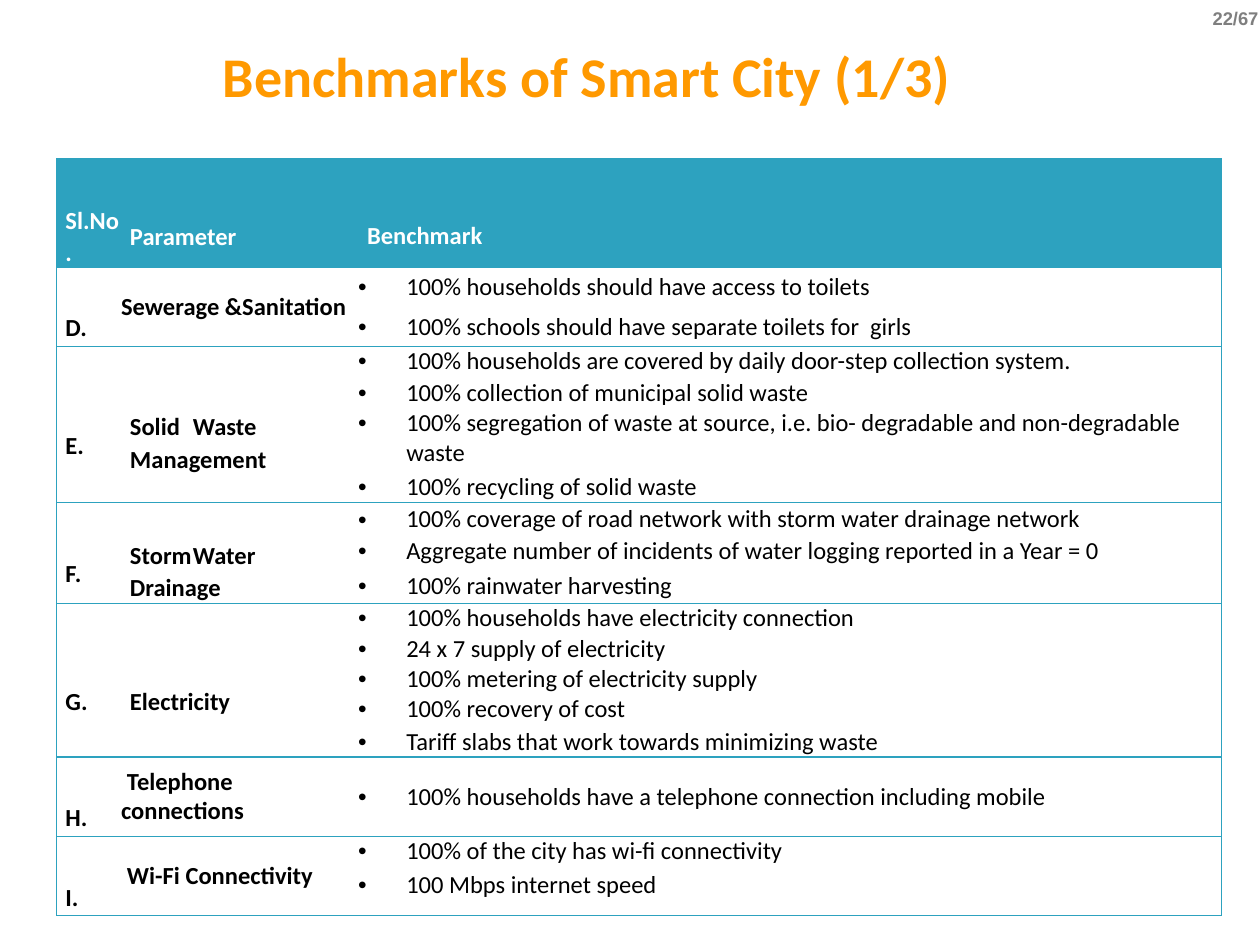
from lxml.etree import SubElement
from pptx import Presentation
from pptx.dml.color import RGBColor
from pptx.enum.text import MSO_ANCHOR, PP_ALIGN
from pptx.oxml.ns import qn
from pptx.util import Cm, Pt

TEAL = RGBColor(0x2D, 0xA2, 0xBF)
ORANGE = RGBColor(0xFF, 0x99, 0x00)
GREY = RGBColor(0x7F, 0x7F, 0x7F)
BLACK = RGBColor(0, 0, 0)
WHITE = RGBColor(255, 255, 255)

WIDTHS = (1.3, 4.78, 17.4)
PAD = 0.87   # drop of a label below the cell's middle line
INSET = 0.18

HEAD = (("Sl.No.", 0.91), ("Parameter", 0.91), ("Benchmark", PAD))

# height, letter, label lines, label (left, first indent, top, tab, gap), bullets with space after
ROWS = (
    (1.59, "D.", ("Sewerage &Sanitation",), (0, 0, 0, 0, 0), (
        ("100% households should have access to toilets", 5.8),
        ("100% schools should have separate toilets for  girls", 5.8))),
    (3.15, "E.", ("Solid\tWaste", "Management"), (INSET, 0, 0.78, 2.54, 1.7), (
        ("100% households are covered by daily door-step collection system.", 1.2),
        ("100% collection of municipal solid waste", 0),
        ("100% segregation of waste at source, i.e. bio- degradable and "
         "non-degradable waste", 2.6),
        ("100% recycling of solid waste", 0))),
    (2.03, "F.", ("Storm\tWater", "Drainage"), (INSET, 0, 0.78, 2.66, 1.4), (
        ("100% coverage of road network with storm water drainage network", 1.1),
        ("Aggregate number of incidents of water logging reported in a Year = 0", 2.9),
        ("100% rainwater harvesting", 0))),
    (3.1, "G.", ("Electricity",), (INSET, 0, PAD, 0, 0), (
        ("100% households have electricity connection", 0.5),
        ("24 x 7 supply of electricity", 0.2),
        ("100% metering of electricity supply", 0),
        ("100% recovery of cost", 2.1),
        ("Tariff slabs that work towards minimizing waste", 0))),
    (1.6, "H.", ("Telephone connections",), (0, 0.12, 0, 0, 0), (
        ("100% households have a telephone connection including mobile", 0),)),
    (1.6, "I.", ("Wi-Fi Connectivity",), (0, 0.12, 0, 0, 0), (
        ("100% of the city has wi-fi connectivity", 2.1),
        ("100 Mbps internet speed", 0))),
)


def style(para, size, color, bold=True, face="Calibri"):
    for run in para.runs:
        font = run.font
        font.name, font.size, font.bold = face, Pt(size), bold
        font.color.rgb = color


def indent(para, left, first=0):
    props = para._p.get_or_add_pPr()
    props.set("marL", str(Cm(left)))
    props.set("indent", str(Cm(first)))
    return props


def bullet(para):
    props = indent(para, 0.97, -0.97)
    tint = SubElement(props, qn("a:buClr"))
    SubElement(tint, qn("a:srgbClr"), val=str(BLACK))
    SubElement(props, qn("a:buFont"), typeface="Arial")
    SubElement(props, qn("a:buChar"), char="•")


def tab(para, at):
    stops = SubElement(para._p.get_or_add_pPr(), qn("a:tabLst"))
    SubElement(stops, qn("a:tab"), pos=str(Cm(at)), algn="l")


def frame(cell, col, fill=None):
    """Rule the cell above and below, and on the table's outer sides."""
    props = cell._tc.get_or_add_tcPr()
    sides = {"L": col == 0, "R": col == len(WIDTHS) - 1, "T": True, "B": True}
    for side, drawn in sides.items():
        line = SubElement(props, qn("a:ln" + side), w=str(Pt(0.75)))
        if drawn:
            paint = SubElement(line, qn("a:solidFill"))
            SubElement(paint, qn("a:srgbClr"), val=str(TEAL))
        else:
            SubElement(line, qn("a:noFill"))
    if fill is None:
        cell.fill.background()
    else:
        cell.fill.solid()
        cell.fill.fore_color.rgb = fill


def write(cell, lines, top=0, right=0.08):
    cell.margin_left = cell.margin_bottom = 0
    cell.margin_top, cell.margin_right = Cm(top), Cm(right)
    cell.vertical_anchor = MSO_ANCHOR.MIDDLE
    cell.text_frame.text = "\n".join(lines)
    return cell.text_frame.paragraphs


def label(cell, text, top, color):
    para = write(cell, [text], top, 0)[0]
    indent(para, INSET)
    para.line_spacing = 1.07 if color == WHITE else 1.0
    style(para, 14, color)


def name(cell, lines, left, first, top, stop, gap):
    paras = write(cell, lines, top)
    for para in paras:
        indent(para, left, first)
        if "\t" in para.text:
            tab(para, stop)
        style(para, 14, BLACK)
    if len(paras) > 1:
        paras[0].space_after = Pt(gap)


def points(cell, items):
    paras = write(cell, [text for text, _ in items])
    for para, (_, gap) in zip(paras, items):
        bullet(para)
        para.space_after = Pt(gap)
        style(para, 14, BLACK, bold=False)


def heading(slide, left, top, width, height):
    box = slide.shapes.add_textbox(Cm(left), Cm(top), Cm(width), Cm(height))
    text = box.text_frame
    text.word_wrap = True
    text.vertical_anchor = MSO_ANCHOR.MIDDLE
    text.text = "Benchmarks of Smart City (1/3)"
    style(text.paragraphs[0], 32, ORANGE)


def folio(slide, left, top, width, height):
    box = slide.shapes.add_textbox(Cm(left), Cm(top), Cm(width), Cm(height))
    text = box.text_frame
    text.word_wrap = False
    text.text = "22/67"
    para = text.paragraphs[0]
    para.alignment = PP_ALIGN.RIGHT
    style(para, 10.5, GREY, face="Arial")


def grid(slide, left, top):
    heights = [2.19] + [row[0] for row in ROWS]
    table = slide.shapes.add_table(
        len(heights), len(WIDTHS), Cm(left), Cm(top),
        Cm(sum(WIDTHS)), Cm(sum(heights))).table
    table.first_row = table.horz_banding = False
    for col, width in zip(table.columns, WIDTHS):
        col.width = Cm(width)
    for row, height in zip(table.rows, heights):
        row.height = Cm(height)

    # Header row
    for col, (text, drop) in enumerate(HEAD):
        cell = table.cell(0, col)
        frame(cell, col, TEAL)
        label(cell, text, drop, WHITE)

    # Body rows
    for num, (_, letter, lines, layout, items) in enumerate(ROWS, 1):
        cells = [table.cell(num, col) for col in range(len(WIDTHS))]
        for col, cell in enumerate(cells):
            frame(cell, col)
        label(cells[0], letter, PAD, BLACK)
        name(cells[1], lines, *layout)
        points(cells[2], items)
    cells[2].vertical_anchor = MSO_ANCHOR.TOP


def main():
    deck = Presentation()
    deck.slide_width, deck.slide_height = Cm(25.4), Cm(19.05)
    slide = deck.slides.add_slide(deck.slide_layouts[6])
    folio(slide, 24.12, 0.03, 1.5, 0.7)
    heading(slide, 4.24, 0.43, 20.68, 2.16)
    grid(slide, 1.14, 3.2)
    deck.save("out.pptx")


if __name__ == "__main__":
    main()
